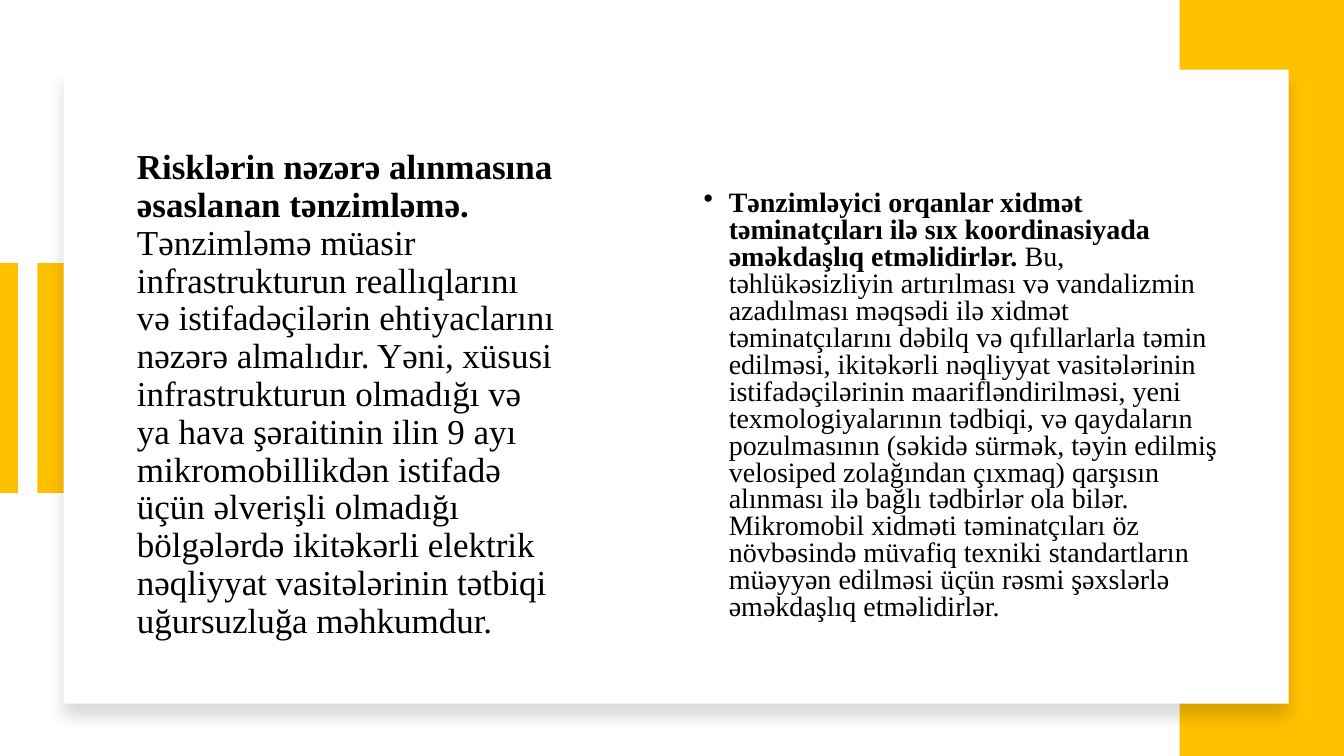
from lxml import etree
from pptx import Presentation
from pptx.dml.color import RGBColor
from pptx.enum import shapes, text
from pptx.oxml import parse_xml
from pptx.oxml.ns import nsdecls, qn
from pptx.util import Inches, Pt

GOLD = RGBColor(0xFF, 0xC0, 0x00)
WHITE = RGBColor(0xFF, 0xFF, 0xFF)
BLACK = RGBColor(0, 0, 0)
FONT = "Times New Roman"

RISK = (
    "Risklərin nəzərə alınmasına əsaslanan tənzimləmə.",
    " Tənzimləmə müasir infrastrukturun reallıqlarını və istifadəçilərin "
    "ehtiyaclarını nəzərə almalıdır. Yəni, xüsusi infrastrukturun olmadığı və "
    "ya hava şəraitinin ilin 9 ayı mikromobillikdən istifadə üçün əlverişli "
    "olmadığı bölgələrdə ikitəkərli elektrik nəqliyyat vasitələrinin tətbiqi "
    "uğursuzluğa məhkumdur.",
)
DUTY = (
    "Tənzimləyici orqanlar xidmət təminatçıları ilə sıx koordinasiyada "
    "əməkdaşlıq etməlidirlər.",
    " Bu, təhlükəsizliyin artırılması və vandalizmin azadılması məqsədi ilə "
    "xidmət təminatçılarını dəbilq və qıfıllarlarla təmin edilməsi, ikitəkərli "
    "nəqliyyat vasitələrinin istifadəçilərinin maarifləndirilməsi, yeni "
    "texmologiyalarının tədbiqi, və qaydaların pozulmasının (səkidə sürmək, "
    "təyin edilmiş velosiped zolağından çıxmaq) qarşısın alınması ilə bağlı "
    "tədbirlər ola bilər. Mikromobil xidməti təminatçıları öz növbəsində "
    "müvafiq texniki standartların müəyyən edilməsi üçün rəsmi şəxslərlə "
    "əməkdaşlıq etməlidirlər.",
)


def add_rect(slide, x, y, w, h, color):
    rect = slide.shapes.add_shape(
        shapes.MSO_SHAPE.RECTANGLE, Inches(x), Inches(y), Inches(w), Inches(h))
    rect.shadow.inherit = False
    rect.fill.solid()
    rect.fill.fore_color.rgb = color
    rect.line.fill.background()
    return rect


def add_accent(slide, x, y, w, h):
    """Thick line at the left of the box, bar at its right."""
    bar = 0.34
    add_rect(slide, x + w - bar, y, bar, h, GOLD)
    line = slide.shapes.add_connector(
        shapes.MSO_CONNECTOR.STRAIGHT,
        Inches(x), Inches(y), Inches(x), Inches(y + h))
    line.line.color.rgb = GOLD
    line.line.width = Pt(14)
    etree.SubElement(line._element.spPr, qn("a:effectLst"))


def add_card(slide, x, y, w, h):
    """White panel with a soft shadow below it."""
    card = add_rect(slide, x, y, w, h, WHITE)
    effects = card._element.spPr.find(qn("a:effectLst"))
    effects.append(parse_xml(
        f'<a:outerShdw {nsdecls("a")} blurRad="{Pt(11)}" dist="{Pt(10)}" '
        'dir="5400000" algn="t" rotWithShape="0"><a:srgbClr val="000000">'
        '<a:alpha val="15000"/></a:srgbClr></a:outerShdw>'))


def add_copy(slide, x, y, w, h, parts, size, spacing):
    """Paragraph with a bold lead, centred vertically in the box."""
    box = slide.shapes.add_textbox(Inches(x), Inches(y), Inches(w), Inches(h))
    frame = box.text_frame
    frame.word_wrap = True
    frame.vertical_anchor = text.MSO_ANCHOR.MIDDLE
    para = frame.paragraphs[0]
    para.line_spacing = spacing
    para.font.name = FONT
    para.font.size = Pt(size)
    para.font.color.rgb = BLACK
    for part, bold in zip(parts, (True, False)):
        run = para.add_run()
        run.text = part
        run.font.bold = bold
    return para


def add_bullet(para, indent):
    para.space_before = Pt(10)
    props = para._p.get_or_add_pPr()
    props.set("marL", str(Inches(indent)))
    props.set("indent", str(-Inches(indent)))
    bullet = parse_xml(f'<a:buChar {nsdecls("a")} char="•"/>')
    props.find(qn("a:defRPr")).addprevious(bullet)


def main():
    deck = Presentation()
    deck.slide_width, deck.slide_height = Inches(13.33), Inches(7.5)
    slide = deck.slides.add_slide(deck.slide_layouts[6])
    add_accent(slide, 0.08, 2.61, 0.63, 2.28)
    add_rect(slide, 11.7, 0, 1.63, 7.5, GOLD)
    add_card(slide, 0.63, 0.69, 12.15, 6.29)
    add_copy(slide, 1.26, 1.36, 4.38, 5.12, RISK, 25, 0.9)
    duty = add_copy(slide, 6.88, 1.6, 5.44, 4.87, DUTY, 20, 0.8)
    add_bullet(duty, 0.25)
    deck.save("out.pptx")


if __name__ == "__main__":
    main()
